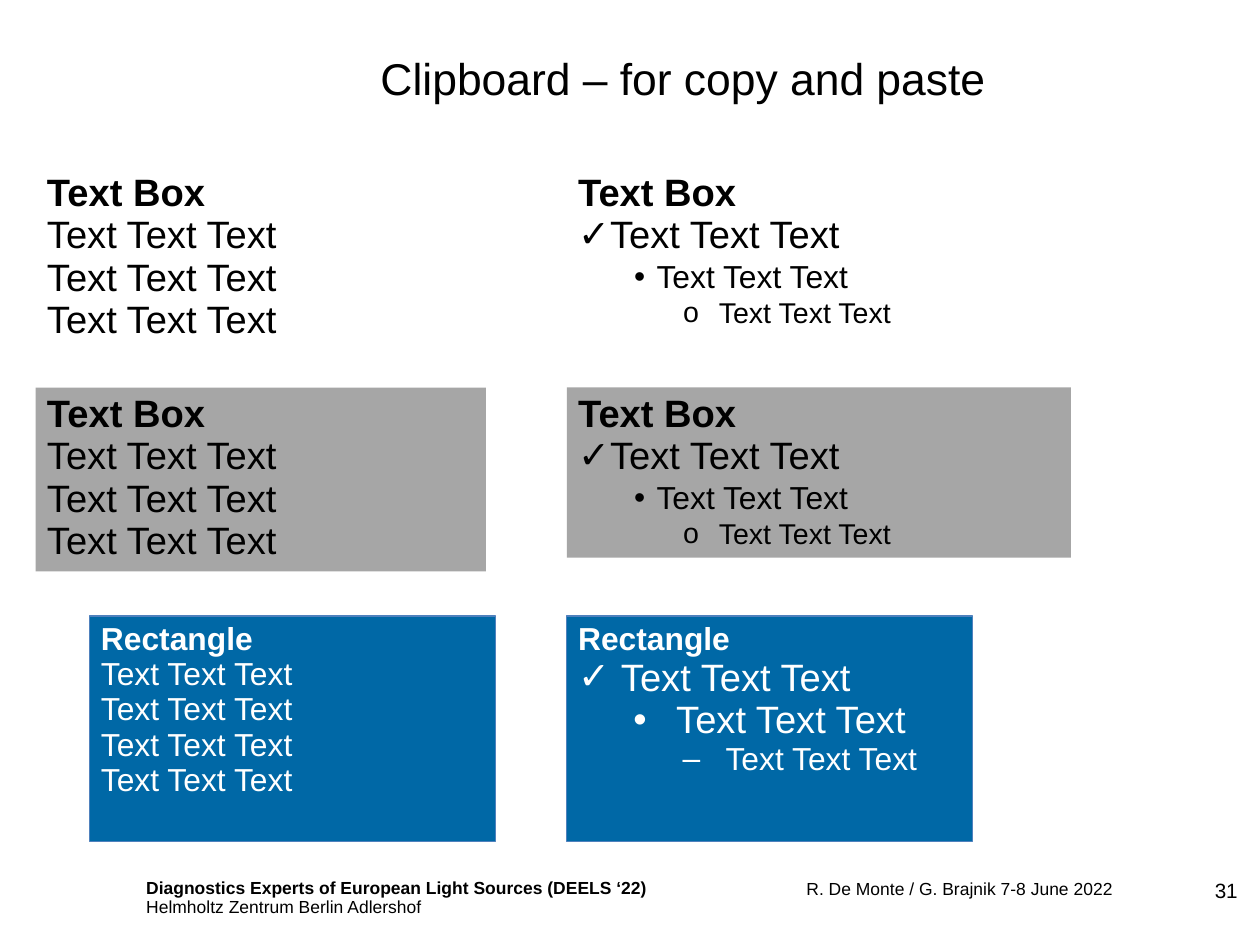
from dataclasses import dataclass

import lxml.etree
import pptx
import pptx.dml.color
import pptx.enum.shapes
import pptx.enum.text
import pptx.oxml.ns
import pptx.util

Pt = pptx.util.Pt
BLACK, WHITE, GREY, BLUE, EDGE = "000000", "FFFFFF", "A6A6A6", "0068A6", "4F81BD"
TIGHT = 0.93
SAMPLE = "Text Text Text"


@dataclass
class Line:
    text: str
    size: float
    bold: bool = False
    bullet: str = ""
    level: int = 0
    margin: float = 0
    hanging: float = 0
    spacing: float = TIGHT


def color(value):
    return pptx.dml.color.RGBColor.from_string(value)


def add_bullet(paragraph, line, bullet_color):
    properties = paragraph._p.get_or_add_pPr()
    properties.set("marL", str(Pt(line.margin)))
    properties.set("indent", str(Pt(-line.hanging)))
    qn = pptx.oxml.ns.qn
    holder = lxml.etree.SubElement(properties, qn("a:buClr"))
    lxml.etree.SubElement(holder, qn("a:srgbClr")).set("val", bullet_color)
    lxml.etree.SubElement(properties, qn("a:buFont")).set("typeface", "Arial")
    lxml.etree.SubElement(properties, qn("a:buChar")).set("char", line.bullet)


def write_lines(text_frame, lines, text_color=BLACK, align="LEFT"):
    for index, line in enumerate(lines):
        paragraph = text_frame.add_paragraph() if index else text_frame.paragraphs[0]
        paragraph.text = line.text
        paragraph.level = line.level
        paragraph.alignment = getattr(pptx.enum.text.PP_ALIGN, align)
        paragraph.line_spacing = line.spacing
        paragraph.space_before = Pt(0)
        if line.bullet:
            add_bullet(paragraph, line, text_color)
        for run in paragraph.runs:
            run.font.name = "Arial"
            run.font.size = Pt(line.size)
            run.font.bold = line.bold
            run.font.color.rgb = color(text_color)


def set_margins(text_frame, left, top, right, bottom):
    text_frame.margin_left, text_frame.margin_right = Pt(left), Pt(right)
    text_frame.margin_top, text_frame.margin_bottom = Pt(top), Pt(bottom)


def add_title(slide, box, text):
    title = slide.shapes.title
    title.left, title.top, title.width, title.height = map(Pt, box)
    title.text_frame.vertical_anchor = pptx.enum.text.MSO_ANCHOR.MIDDLE
    write_lines(title.text_frame, [Line(text, 28)])


def add_text_box(slide, box, lines, fill=None):
    shape = slide.shapes.add_textbox(*map(Pt, box))
    shape.text_frame.word_wrap = True
    shape.text_frame.auto_size = pptx.enum.text.MSO_AUTO_SIZE.SHAPE_TO_FIT_TEXT
    if fill:
        shape.fill.solid()
        shape.fill.fore_color.rgb = color(fill)
    write_lines(shape.text_frame, lines)


def add_rectangle(slide, box, lines):
    shape = slide.shapes.add_shape(pptx.enum.shapes.MSO_SHAPE.RECTANGLE, *map(Pt, box))
    shape.shadow.inherit = False
    shape.fill.solid()
    shape.fill.fore_color.rgb = color(BLUE)
    shape.line.color.rgb = color(EDGE)
    shape.line.width = Pt(0.75)
    shape.text_frame.vertical_anchor = pptx.enum.text.MSO_ANCHOR.TOP
    write_lines(shape.text_frame, lines, WHITE)


def add_footer(slide, left, top):
    # Event, authors and slide number, placed from the footer's corner
    event = [
        Line("Diagnostics Experts of European Light Sources (DEELS ‘22)", 11, True),
        Line("Helmholtz Zentrum Berlin Adlershof", 11),
    ]
    authors = [Line("R. De Monte / G. Brajnik 7-8 June 2022", 11)]
    number = [Line("31", 13)]
    wide, none = (7.2, 4.3, 7.2, 3.6), (0, 0, 0, 0)
    parts = [
        ((0, 0, 385.2, 28.1), event, wide, "LEFT"),
        ((362.8, 0.7, 260.6, 24.5), authors, wide, "RIGHT"),
        ((680.3, 5.6, 16.6, 18), number, none, "LEFT"),
    ]
    for (x, y, width, height), lines, margins, align in parts:
        shape = slide.shapes.add_textbox(Pt(left + x), Pt(top + y), Pt(width), Pt(height))
        shape.text_frame.word_wrap = lines is number
        set_margins(shape.text_frame, *margins)
        write_lines(shape.text_frame, lines, align=align)


def add_samples(slide, left, top):
    # Text boxes: plain row, then the same row on grey
    heading = Line("Text Box", 24, True)
    plain = [heading] + [Line(SAMPLE, 24)] * 3
    listed = [
        heading,
        Line(SAMPLE, 24, bullet="✓"),
        Line(SAMPLE, 20, False, "•", 1, 49.4, 14.2, 1),
        Line(SAMPLE, 18, False, "o", 2, 88.6, 22.5, 1),
    ]
    column = left + 334.6
    for row, fill in enumerate([None, GREY]):
        y = top + row * 139.2
        add_text_box(slide, (left, y, 283.6, 115.8), plain, fill)
        add_text_box(slide, (column, y, 317.5, 107.2), listed, fill)

    # Blue rectangles
    heading = Line("Rectangle", 20, True)
    plain = [heading] + [Line(SAMPLE, 20)] * 4
    listed = [
        heading,
        Line(SAMPLE, 24, False, "✓", 0, 27, 27),
        Line(SAMPLE, 24, False, "•", 1, 61.8, 27),
        Line(SAMPLE, 20, False, "–", 2, 92.9, 27),
    ]
    for x, lines in [(left + 34, plain), (column, listed)]:
        add_rectangle(slide, (x, top + 283.2, 255.6, 141.8), lines)


def main():
    presentation = pptx.Presentation()
    presentation.slide_width, presentation.slide_height = Pt(793.75), Pt(595.25)
    slide = presentation.slides.add_slide(presentation.slide_layouts[5])
    add_title(slide, (232.5, 14, 527, 73.4), "Clipboard – for copy and paste")
    add_samples(slide, 22.5, 104.9)
    add_footer(slide, 85, 549)
    presentation.save("out.pptx")


if __name__ == "__main__":
    main()
